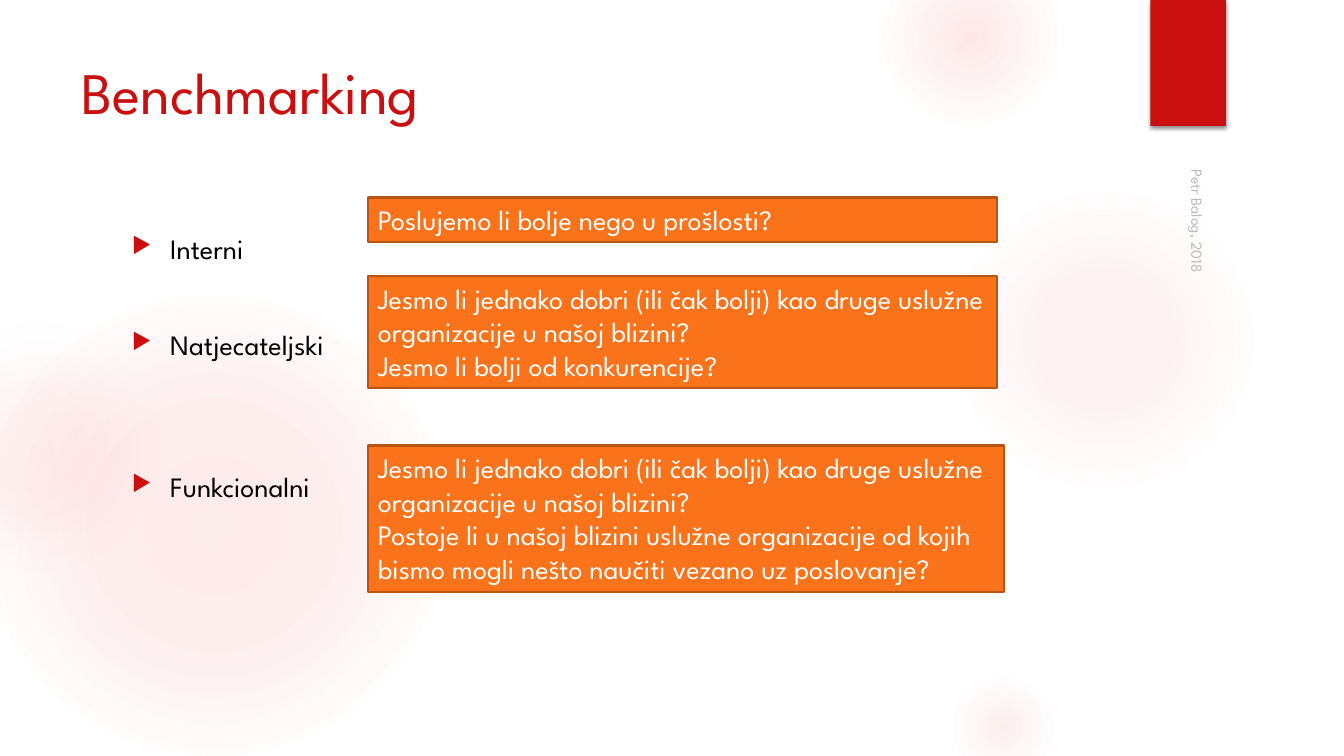
from lxml import etree
from pptx import Presentation
from pptx import util as u
from pptx.dml.color import RGBColor
from pptx.enum import shapes, text
from pptx.oxml import ns

RED = "CB0F0F"
GLOW = "F35C5C"
A = ns.nsdecls("a")


def color(hex_code):
    return RGBColor.from_string(hex_code)


def xml(source):
    return etree.fromstring(source)


def write(para, words, size=20, fill="000000", font="League Spartan", alpha=None):
    span = para.add_run()
    span.text = words
    span.font.size = u.Pt(size)
    span.font.name = font
    span.font.color.rgb = color(fill)
    if alpha:
        tone = span._r.rPr.find(".//" + ns.qn("a:srgbClr"))
        tone.append(xml(f'<a:alpha {A} val="{alpha * 1000}"/>'))


class Slide:
    def __init__(self, deck, font="League Spartan"):
        self.page = deck.slides.add_slide(deck.slide_layouts[6])
        self.font = font

    def shape(self, kind, place):
        shape = self.page.shapes.add_shape(kind, *map(u.Inches, place))
        shape.shadow.inherit = False
        shape.line.fill.background()
        return shape

    def glow(self, left, top, size, stops):
        """Soft round spot; stops are (position %, colour, opacity %)."""
        spot = self.shape(shapes.MSO_SHAPE.OVAL, (left, top, size, size))
        steps = "".join(
            f'<a:gs pos="{at * 1000}"><a:srgbClr val="{tone}">'
            f'<a:alpha val="{alpha * 1000}"/></a:srgbClr></a:gs>'
            for at, tone, alpha in stops)
        geometry = spot._element.spPr.find(ns.qn("a:prstGeom"))
        geometry.addnext(xml(
            f'<a:gradFill {A}><a:gsLst>{steps}</a:gsLst><a:path path="circle">'
            '<a:fillToRect l="50000" t="50000" r="50000" b="50000"/>'
            '</a:path></a:gradFill>'))

    def ribbon(self, *place):
        band = self.shape(shapes.MSO_SHAPE.RECTANGLE, place)
        band.fill.solid()
        band.fill.fore_color.rgb = color(RED)
        effects = band._element.spPr.find(ns.qn("a:effectLst"))
        effects.append(xml(
            f'<a:outerShdw {A} blurRad="{u.Pt(3)}" dist="{u.Pt(2)}" dir="5400000" '
            'rotWithShape="0"><a:srgbClr val="000000"><a:alpha val="45000"/>'
            '</a:srgbClr></a:outerShdw>'))

    def label(self, place, words, turn=0, anchor=text.MSO_ANCHOR.TOP, **style):
        box = self.page.shapes.add_textbox(*map(u.Inches, place))
        box.rotation = turn
        box.text_frame.word_wrap = True
        box.text_frame.vertical_anchor = anchor
        write(box.text_frame.paragraphs[0], words, font=self.font, **style)

    def bullets(self, place, items):
        """Bulleted list of (words, space before in points)."""
        box = self.page.shapes.add_textbox(*map(u.Inches, place))
        frame = box.text_frame
        frame.word_wrap = True
        for index, (words, gap) in enumerate(items):
            para = frame.add_paragraph() if index else frame.paragraphs[0]
            props = para._p.get_or_add_pPr()
            props.set("marL", str(u.Inches(0.38)))
            props.set("indent", str(u.Inches(-0.38)))
            for part in (f'<a:buClr {A}><a:srgbClr val="{RED}"/></a:buClr>',
                         f'<a:buSzPct {A} val="80000"/>',
                         f'<a:buChar {A} char="▶"/>'):
                props.append(xml(part))
            para.space_before = u.Pt(gap)
            para.space_after = u.Pt(6)
            write(para, words, font=self.font)

    def panel(self, place, lines):
        box = self.shape(shapes.MSO_SHAPE.RECTANGLE, place)
        box.fill.solid()
        box.fill.fore_color.rgb = color("FA731A")
        box.line.color.rgb = color("B95513")
        box.line.width = u.Pt(1.5)
        frame = box.text_frame
        frame.word_wrap = True
        frame.auto_size = text.MSO_AUTO_SIZE.SHAPE_TO_FIT_TEXT
        frame.vertical_anchor = text.MSO_ANCHOR.TOP
        for index, words in enumerate(lines):
            para = frame.add_paragraph() if index else frame.paragraphs[0]
            para.alignment = text.PP_ALIGN.LEFT
            write(para, words, fill="FFFFFF", font=self.font)


def main():
    deck = Presentation()
    deck.slide_width, deck.slide_height = u.Inches(13.33), u.Inches(7.5)
    slide = Slide(deck)

    for left, top, size, inner, middle, middle_at, edge_at, edge in (
            (-0.17, 2.92, 4.58, 11, 10, 36, 75, GLOW),
            (-0.92, 3.17, 2.58, 8, 5, 36, 71, "F3F3F3"),
            (9.41, 1.83, 3.08, 7, 6, 36, 69, GLOW),
            (8.75, -0.5, 1.75, 14, 7, 36, 73, GLOW),
            (9.41, 6.67, 1.08, 10, 5, 31, 66, GLOW)):
        slide.glow(left, top, size, (
            (0, GLOW, inner), (middle_at, GLOW, middle), (edge_at, edge, 0),
            (100, edge, 0)))
    slide.ribbon(11.41, 0, 0.75, 1.25)

    slide.label((0.71, 0.5, 10.29, 1.53), "Benchmarking", size=42, fill=RED)
    slide.bullets((1.21, 2.25, 9.78, 4.59), (
        ("Interni", 0), ("Natjecateljski", 38), ("Funkcionalni", 72)))

    equally_good = ("Jesmo li jednako dobri (ili čak bolji) kao druge uslužne "
                    "organizacije u našoj blizini?")
    for top, width, height, lines in (
            (1.96, 6.24, 0.44, ["Poslujemo li bolje nego u prošlosti?"]),
            (2.74, 6.24, 1.11, [equally_good, "Jesmo li bolji od konkurencije?"]),
            (4.42, 6.31, 1.45, [
                equally_good,
                "Postoje li u našoj blizini uslužne organizacije od kojih "
                "bismo mogli nešto naučiti vezano uz poslovanje?"])):
        slide.panel((3.65, top, width, height), lines)

    slide.label((9.79, 3.53, 4.22, 0.33), "Petr Balog, 2018", turn=90,
                anchor=text.MSO_ANCHOR.BOTTOM, size=11, fill="8C8C8C", alpha=60)
    deck.save("out.pptx")


if __name__ == "__main__":
    main()
